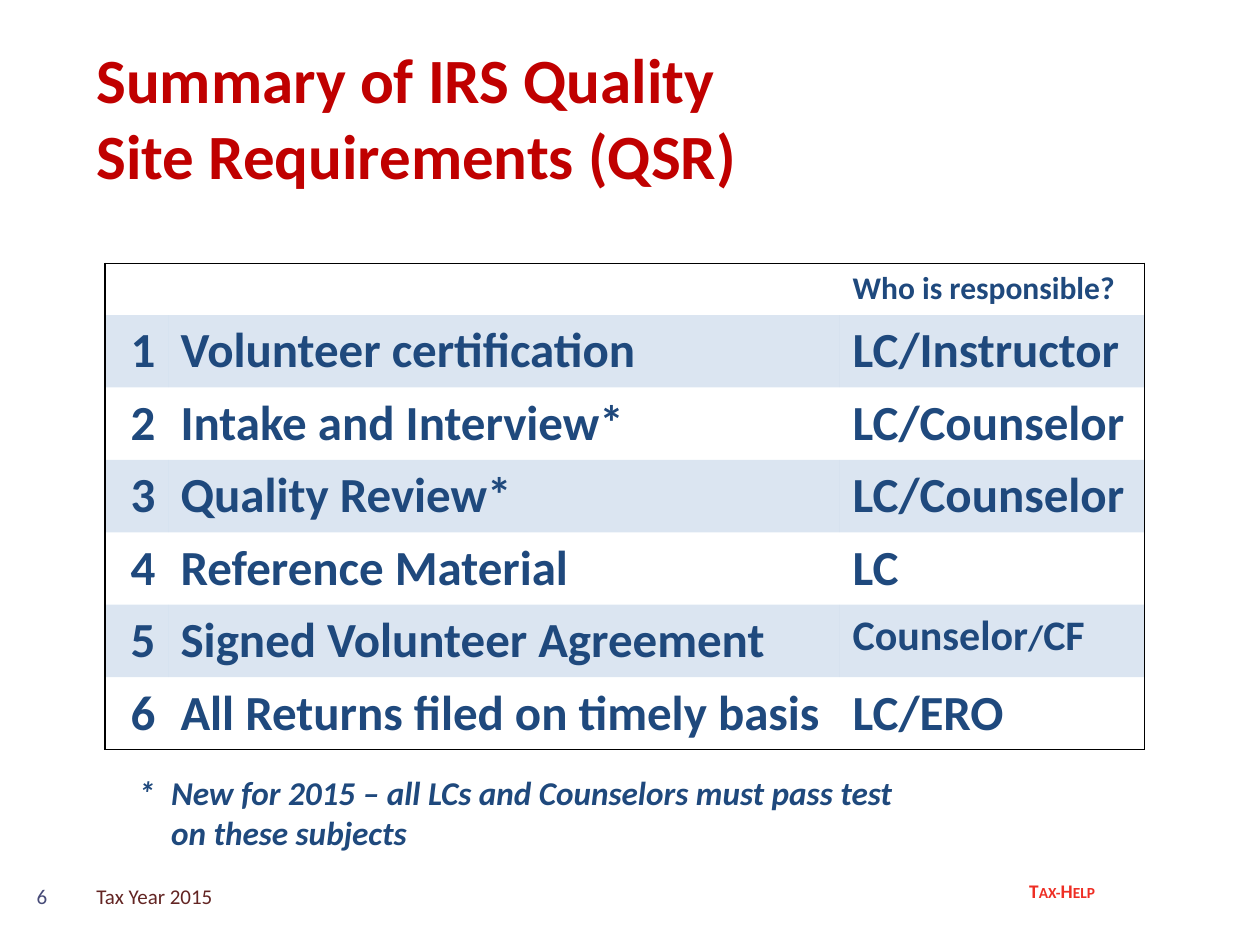
from dataclasses import dataclass

from lxml.etree import SubElement
from pptx import Presentation
from pptx.dml.color import RGBColor
from pptx.enum.text import MSO_ANCHOR, PP_ALIGN
from pptx.oxml.ns import qn
from pptx.util import Emu, Inches, Pt

COLORS = {
    "title": "C00000",
    "body": "1F497D",
    "band": "4F81BD",
    "border": "000000",
    "program": "EE2E24",
    "number": "474B78",
    "footer": "632523",
}
FONT = "Calibri"
GRID_COLUMNS, GRID_ROWS = 120, 90
SLIDE_WIDTH, SLIDE_HEIGHT = Inches(10), Inches(7.5)


@dataclass
class Label:
    text: str
    left: float
    top: float
    width: float
    height: float
    size: int
    color: str
    bold: bool = False
    italic: bool = False
    small_caps: bool = False
    align: PP_ALIGN = PP_ALIGN.LEFT
    anchor: MSO_ANCHOR = MSO_ANCHOR.TOP
    side_margin: float = 1.2
    hanging: float = 0


@dataclass
class Requirement:
    name: str
    responsible: list[tuple[str, int]]


LABELS = [
    Label("Tax-Help", 96, 83.16, 10.32, 3.5, 11, "program", bold=True,
          small_caps=True, align=PP_ALIGN.CENTER),
    Label("6", 2, 82.92, 4, 4.8, 12, "number", align=PP_ALIGN.CENTER,
          anchor=MSO_ANCHOR.MIDDLE, side_margin=0),
    Label("Summary of IRS Quality \vSite Requirements (QSR)", 8, 3.6, 104, 15, 36,
          "title", bold=True, anchor=MSO_ANCHOR.MIDDLE),
    Label("Tax Year 2015", 8, 82.92, 38, 4.8, 12, "footer", anchor=MSO_ANCHOR.MIDDLE),
    Label("*\tNew for 2015 – all LCs and Counselors must pass test on these subjects",
          12, 73, 76, 8.88, 19, "body", bold=True, italic=True, hanging=3.12),
]
REQUIREMENTS = [
    Requirement("Volunteer certification", [("LC/Instructor", 28)]),
    Requirement("Intake and Interview*", [("LC/Counselor", 28)]),
    Requirement("Quality Review*", [("LC/Counselor", 28)]),
    Requirement("Reference Material", [("LC", 28)]),
    Requirement("Signed Volunteer Agreement", [("Counselor", 24), ("/", 20), ("CF", 24)]),
    Requirement("All Returns filed on timely basis", [("LC/ERO", 28)]),
]
COLUMN_WIDTHS = [6, 64, 29]
HEADER_HEIGHT, ROW_HEIGHT = 4.92, 6.9


def across(columns: float) -> Emu:
    return Emu(round(SLIDE_WIDTH * columns / GRID_COLUMNS))


def down(rows: float) -> Emu:
    return Emu(round(SLIDE_HEIGHT * rows / GRID_ROWS))


def style_span(span, size: int, color: str, bold: bool, italic: bool = False) -> None:
    span.font.name = FONT
    span.font.size = Pt(size)
    span.font.bold = bold
    span.font.italic = italic
    span.font.color.rgb = RGBColor.from_string(COLORS[color])


def add_label(page, label: Label) -> None:
    box = page.shapes.add_textbox(across(label.left), down(label.top),
                                  across(label.width), down(label.height))
    frame = box.text_frame
    frame.word_wrap = True
    frame.vertical_anchor = label.anchor
    frame.margin_left = frame.margin_right = across(label.side_margin)
    frame.text = label.text
    para = frame.paragraphs[0]
    para.alignment = label.align
    if label.hanging:
        properties = para._p.get_or_add_pPr()
        properties.set("marL", str(across(label.hanging)))
        properties.set("indent", str(-across(label.hanging)))
    for span in para.runs:
        style_span(span, label.size, label.color, label.bold, label.italic)
        if label.small_caps:
            span.font._element.set("cap", "small")


def set_borders(cell, visible: dict[str, bool]) -> None:
    """Draw the visible sides and switch the others off."""
    properties = cell._tc.get_or_add_tcPr()
    for position, (side, shown) in enumerate(visible.items()):
        line = SubElement(properties, qn(f"a:ln{side}"), w=str(Pt(1)))
        if shown:
            fill = SubElement(line, qn("a:solidFill"))
            SubElement(fill, qn("a:srgbClr"), val=COLORS["border"])
        else:
            SubElement(line, qn("a:noFill"))
        properties.insert(position, line)


def fill_band(cell) -> None:
    cell.fill.solid()
    cell.fill.fore_color.rgb = RGBColor.from_string(COLORS["band"])
    color = cell._tc.tcPr.find(f".//{qn('a:srgbClr')}")
    SubElement(color, qn("a:alpha"), val="20000")


def write_cell(cell, spans: list[tuple[str, int]], align: PP_ALIGN = PP_ALIGN.LEFT) -> None:
    para = cell.text_frame.paragraphs[0]
    para.alignment = align
    for text, size in spans:
        span = para.add_run()
        span.text = text
        style_span(span, size, "body", bold=True)


def add_requirements_table(page, requirements: list[Requirement]) -> None:
    row_heights = [HEADER_HEIGHT] + [ROW_HEIGHT] * len(requirements)
    table = page.shapes.add_table(
        len(row_heights), len(COLUMN_WIDTHS), across(10), down(25.08),
        across(sum(COLUMN_WIDTHS)), down(sum(row_heights))).table
    table.first_row = table.horz_banding = False
    for column, width in zip(table.columns, COLUMN_WIDTHS):
        column.width = across(width)
    for row, height in zip(table.rows, row_heights):
        row.height = down(height)

    write_cell(table.cell(0, 2), [("Who is responsible?", 18)])
    for number, requirement in enumerate(requirements, 1):
        write_cell(table.cell(number, 0), [(str(number), 28)], PP_ALIGN.RIGHT)
        write_cell(table.cell(number, 1), [(requirement.name, 28)])
        write_cell(table.cell(number, 2), requirement.responsible)

    last_row, last_column = len(row_heights) - 1, len(COLUMN_WIDTHS) - 1
    for row_index, row in enumerate(table.rows):
        for column_index, cell in enumerate(row.cells):
            if row_index % 2:
                fill_band(cell)
            else:
                cell.fill.background()
            set_borders(cell, {"L": column_index == 0, "R": column_index == last_column,
                               "T": row_index == 0, "B": row_index == last_row})


def main() -> None:
    deck = Presentation()
    deck.slide_width, deck.slide_height = SLIDE_WIDTH, SLIDE_HEIGHT
    page = deck.slides.add_slide(deck.slide_layouts[6])
    for label in LABELS:
        add_label(page, label)
    add_requirements_table(page, REQUIREMENTS)
    deck.save("out.pptx")


if __name__ == "__main__":
    main()
